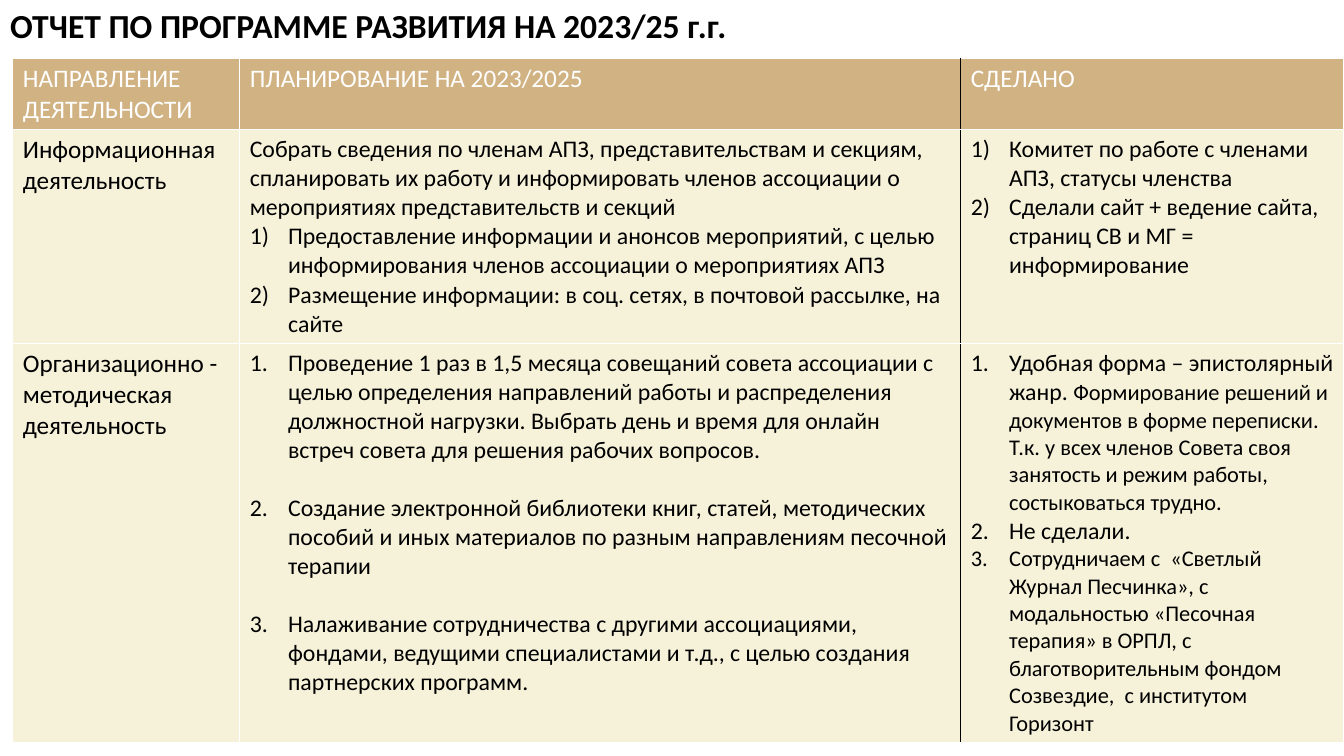
from pptx import Presentation
from pptx import util as u
from pptx.dml import color
from pptx.enum import text
from pptx.oxml import ns
from lxml import etree

TITLE = "ОТЧЕТ ПО ПРОГРАММЕ РАЗВИТИЯ НА 2023/25 г.г."
HEADINGS = ["НАПРАВЛЕНИЕ ДЕЯТЕЛЬНОСТИ", "ПЛАНИРОВАНИЕ НА 2023/2025", "СДЕЛАНО"]
BRACKET, PERIOD = "arabicParenR", "arabicPeriod"

INFORMATION = [
    [
        (None, [("Информационная", 18)]),
        (None, [("деятельность", 18)]),
    ],
    [
        (None, [("Собрать сведения по членам АПЗ, представительствам и секциям, "
                 "спланировать их работу и информировать членов ассоциации о "
                 "мероприятиях представительств и секций", 17)]),
        (BRACKET, [("Предоставление информации и анонсов мероприятий, с целью "
                    "информирования членов ассоциации о мероприятиях АПЗ", 17)]),
        (BRACKET, [("Размещение информации: в соц. сетях, в почтовой рассылке, "
                    "на сайте", 17)]),
    ],
    [
        (BRACKET, [("Комитет по работе с членами АПЗ, статусы членства", 17)]),
        (BRACKET, [("Сделали сайт + ведение сайта, страниц СВ и МГ = "
                    "информирование", 17)]),
    ],
]

ORGANISATION = [
    [
        (None, [("Организационно - методическая", 18)]),
        (None, [("деятельность", 18)]),
    ],
    [
        (PERIOD, [("Проведение 1 раз в 1,5 месяца совещаний совета ассоциации с "
                   "целью определения направлений работы и распределения "
                   "должностной нагрузки. Выбрать день и время для онлайн встреч "
                   "совета для решения рабочих вопросов.", 17)]),
        (PERIOD, [("Создание электронной библиотеки книг, статей, методических "
                   "пособий и иных материалов по разным направлениям песочной "
                   "терапии", 17)]),
        (PERIOD, [("Налаживание сотрудничества с другими ассоциациями, фондами, "
                   "ведущими специалистами и т.д., с целью создания партнерских "
                   "программ.", 17)]),
    ],
    [
        (PERIOD, [("Удобная форма – эпистолярный жанр. ", 17),
                  ("Формирование решений и документов в форме переписки. Т.к. у "
                   "всех членов Совета своя занятость и режим работы, "
                   "состыковаться трудно.", 16)]),
        (PERIOD, [("Не сделали.", 17)]),
        (PERIOD, [("Сотрудничаем с  «Светлый Журнал Песчинка», с модальностью "
                   "«Песочная терапия» в ОРПЛ, с благотворительным фондом "
                   "Созвездие,  с институтом Горизонт", 16)]),
    ],
]


def rgb(value):
    return color.RGBColor.from_string(value)


class ReportSlide:
    font = "Calibri"
    ink, paper = "000000", "FFFFFF"
    header_fill, body_fill = "D1B283", "F6F2DA"
    indent = u.Inches(0.38)

    def __init__(self, presentation):
        self.width = presentation.slide_width
        self.height = presentation.slide_height
        self.slide = presentation.slides.add_slide(presentation.slide_layouts[5])

    def box(self, left, top, width, height):
        return (round(left * self.width), round(top * self.height),
                round(width * self.width), round(height * self.height))

    def format_run(self, run, size, ink, bold=False):
        run.font.name = self.font
        run.font.size = u.Pt(size)
        run.font.bold = bold
        run.font.color.rgb = rgb(ink)

    def title(self, words, area):
        shape = self.slide.shapes.title
        shape.left, shape.top, shape.width, shape.height = self.box(*area)
        frame = shape.text_frame
        frame.text = words
        frame.word_wrap = True
        frame.auto_size = text.MSO_AUTO_SIZE.NONE
        frame.vertical_anchor = text.MSO_ANCHOR.TOP
        paragraph = frame.paragraphs[0]
        paragraph.alignment = text.PP_ALIGN.LEFT
        self.format_run(paragraph.runs[0], 24, self.ink, bold=True)

    def number(self, paragraph, scheme):
        properties = paragraph._p.get_or_add_pPr()
        properties.set("marL", str(self.indent))
        properties.set("indent", str(-self.indent))
        etree.SubElement(properties, ns.qn("a:buFont"), typeface="+mj-lt")
        etree.SubElement(properties, ns.qn("a:buAutoNum"), type=scheme)

    def border(self, cell, side, ink):
        properties = cell._tc.get_or_add_tcPr()
        line = etree.SubElement(properties, ns.qn("a:ln" + side), w=str(u.Pt(1)))
        fill = etree.SubElement(line, ns.qn("a:solidFill"))
        etree.SubElement(fill, ns.qn("a:srgbClr"), val=ink)

    def cell(self, cell, paragraphs, ink, gap):
        frame = cell.text_frame
        for index, (scheme, pieces) in enumerate(paragraphs):
            paragraph = frame.add_paragraph() if index else frame.paragraphs[0]
            if gap and index < len(paragraphs) - 1:
                paragraph.space_after = u.Pt(gap)
            if scheme:
                self.number(paragraph, scheme)
            for words, size in pieces:
                run = paragraph.add_run()
                run.text = words
                self.format_run(run, size, ink)

    def table(self, rows, area, columns, heights, gaps):
        left, top, width, height = self.box(*area)
        table = self.slide.shapes.add_table(
            len(rows), len(columns), left, top, width, height).table
        table.first_row = table.horz_banding = False
        for column, share in zip(table.columns, columns):
            column.width = round(share * width / sum(columns))
        for row, share in zip(table.rows, heights):
            row.height = round(share * height / sum(heights))
        for r, row in enumerate(rows):
            for c, paragraphs in enumerate(row):
                cell = table.cell(r, c)
                self.cell(cell, paragraphs, self.ink if r else self.paper,
                          gaps.get((r, c), 0))
                self.border(cell, "L", self.ink if c == 2 else self.paper)
                self.border(cell, "R", self.ink if c == 1 else self.paper)
                self.border(cell, "T", self.paper)
                self.border(cell, "B", self.paper)
                cell.fill.solid()
                cell.fill.fore_color.rgb = rgb(self.body_fill if r else self.header_fill)


def main():
    presentation = Presentation()
    presentation.slide_width = u.Inches(13.33)
    presentation.slide_height = u.Inches(7.5)
    report = ReportSlide(presentation)
    report.title(TITLE, (0, 0, 0.875, 0.067))
    header = [[(None, [(heading, 18)])] for heading in HEADINGS]
    report.table(
        [header, INFORMATION, ORGANISATION],
        area=(0.0095, 0.077, 0.9905, 0.904),
        columns=(2.25, 7.15, 3.8),
        heights=(0.71, 2.12, 3.95),
        gaps={(2, 1): 20.5},
    )
    presentation.save("out.pptx")


if __name__ == "__main__":
    main()
